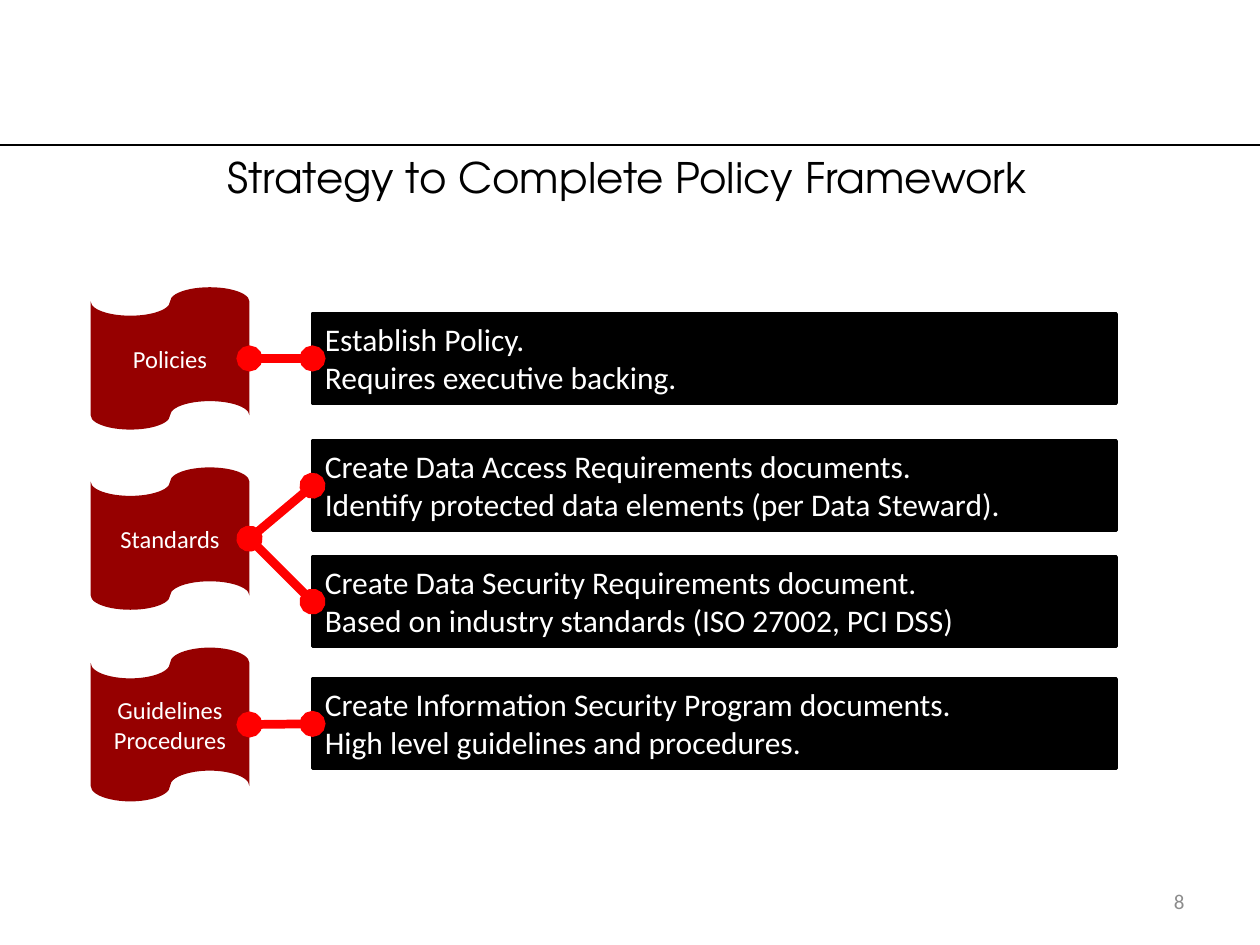
from lxml.etree import SubElement
from pptx import Presentation
from pptx.dml.color import RGBColor
from pptx.enum.shapes import MSO_CONNECTOR, MSO_SHAPE
from pptx.enum.text import MSO_ANCHOR, MSO_AUTO_SIZE, PP_ALIGN
from pptx.oxml.ns import qn
from pptx.util import Inches, Pt

BLACK = RGBColor(0, 0, 0)
WHITE = RGBColor(255, 255, 255)
GRAY = RGBColor(0x8C, 0x8C, 0x8C)
MAROON = RGBColor(0x96, 0, 0)
RED = RGBColor(255, 0, 0)
WIDE, HIGH = 10, 7.5
RULE_Y = 1.15
TAPE_X, TAPE_Y, TAPE_W, TAPE_STEP = 0.72, 2.28, 1.26, 1.43
BAR_X, BAR_W, BAR_H = 2.48, 6.38, 0.71
LEFT, RIGHT = 1, 3

STAGES = [
    ("Policies", 1.13, [
        (2.49, "Establish Policy.\nRequires executive backing.")]),
    ("Standards", 1.13, [
        (3.5, "Create Data Access Requirements documents.\n"
              "Identify protected data elements (per Data Steward)."),
        (4.42, "Create Data Security Requirements document.\n"
               "Based on industry standards (ISO 27002, PCI DSS)")]),
    ("Guidelines\nProcedures", 1.22, [
        (5.39, "Create Information Security Program documents.\n"
               "High level guidelines and procedures.")]),
]


def write(shape, text, size, color, align, anchor, font="Calibri"):
    """Fill a shape with text in one style."""
    frame = shape.text_frame
    frame.text = text
    frame.word_wrap = True
    frame.vertical_anchor = anchor
    for para in frame.paragraphs:
        para.alignment = align
        for run in para.runs:
            run.font.name = font
            run.font.size = Pt(size)
            run.font.color.rgb = color


def add_block(slide, kind, box, fill):
    """Add a plain filled shape without a line."""
    shape = slide.shapes.add_shape(kind, *map(Inches, box))
    shape.shadow.inherit = False
    shape.fill.solid()
    shape.fill.fore_color.rgb = fill
    shape.line.fill.background()
    return shape


def add_tape(slide, row, text, height):
    """Add the wavy label of a stage."""
    box = TAPE_X, TAPE_Y + row * TAPE_STEP, TAPE_W, height
    tape = add_block(slide, MSO_SHAPE.FLOWCHART_PUNCHED_TAPE, box, MAROON)
    write(tape, text, 14, WHITE, PP_ALIGN.CENTER, MSO_ANCHOR.MIDDLE)
    return tape


def add_bar(slide, top, text):
    """Add the black bar that describes a task."""
    box = BAR_X, top, BAR_W, BAR_H
    bar = add_block(slide, MSO_SHAPE.RECTANGLE, box, BLACK)
    bar.line.color.rgb = BLACK
    bar.line.width = Pt(2)
    write(bar, text, 18, WHITE, PP_ALIGN.LEFT, MSO_ANCHOR.TOP)
    bar.text_frame.auto_size = MSO_AUTO_SIZE.SHAPE_TO_FIT_TEXT
    return bar


def add_line(slide, start, end, color, width):
    """Add a straight line without a shadow."""
    line = slide.shapes.add_connector(
        MSO_CONNECTOR.STRAIGHT, *map(Inches, start + end))
    line.line.color.rgb = color
    line.line.width = Pt(width)
    return line


def end_line(line, dots=False):
    """Close the line style with optional round ends and no effects."""
    if dots:
        for end in ("a:headEnd", "a:tailEnd"):
            SubElement(line.line._get_or_add_ln(), qn(end), type="oval")
    SubElement(line._element.spPr, qn("a:effectLst"))


def add_link(slide, tape, bar):
    """Join a stage label to one of its tasks."""
    link = add_line(slide, (0, 0), (0, 0), RED, 5)
    link.begin_connect(tape, RIGHT)
    link.end_connect(bar, LEFT)
    end_line(link, dots=True)


def add_title(slide, text):
    """Place and style the title below the rule."""
    title = slide.shapes.title
    title.left, title.top = Inches(0.21), Inches(RULE_Y)
    title.width, title.height = Inches(9.53), Inches(0.5)
    write(title, text, 24, BLACK, PP_ALIGN.CENTER, MSO_ANCHOR.TOP,
          "TeX Gyre Adventor")
    title.text_frame.auto_size = MSO_AUTO_SIZE.SHAPE_TO_FIT_TEXT


def add_number(slide, text):
    """Add the page number at the lower right."""
    box = slide.shapes.add_textbox(*map(Inches, (9, 6.95, 0.5, 0.4)))
    write(box, text, 12, GRAY, PP_ALIGN.RIGHT, MSO_ANCHOR.MIDDLE)


def main():
    """Build and save the slide."""
    deck = Presentation()
    deck.slide_width, deck.slide_height = Inches(WIDE), Inches(HIGH)
    slide = deck.slides.add_slide(deck.slide_layouts[5])
    end_line(add_line(slide, (0, RULE_Y), (WIDE, RULE_Y), BLACK, 1))
    add_number(slide, "8")
    add_title(slide, "Strategy to Complete Policy Framework")
    pairs = []
    for row, (label, height, tasks) in enumerate(STAGES):
        tape = add_tape(slide, row, label, height)
        pairs += [(tape, add_bar(slide, *task)) for task in tasks]
    for tape, bar in pairs:
        add_link(slide, tape, bar)
    deck.save("out.pptx")


if __name__ == "__main__":
    main()
